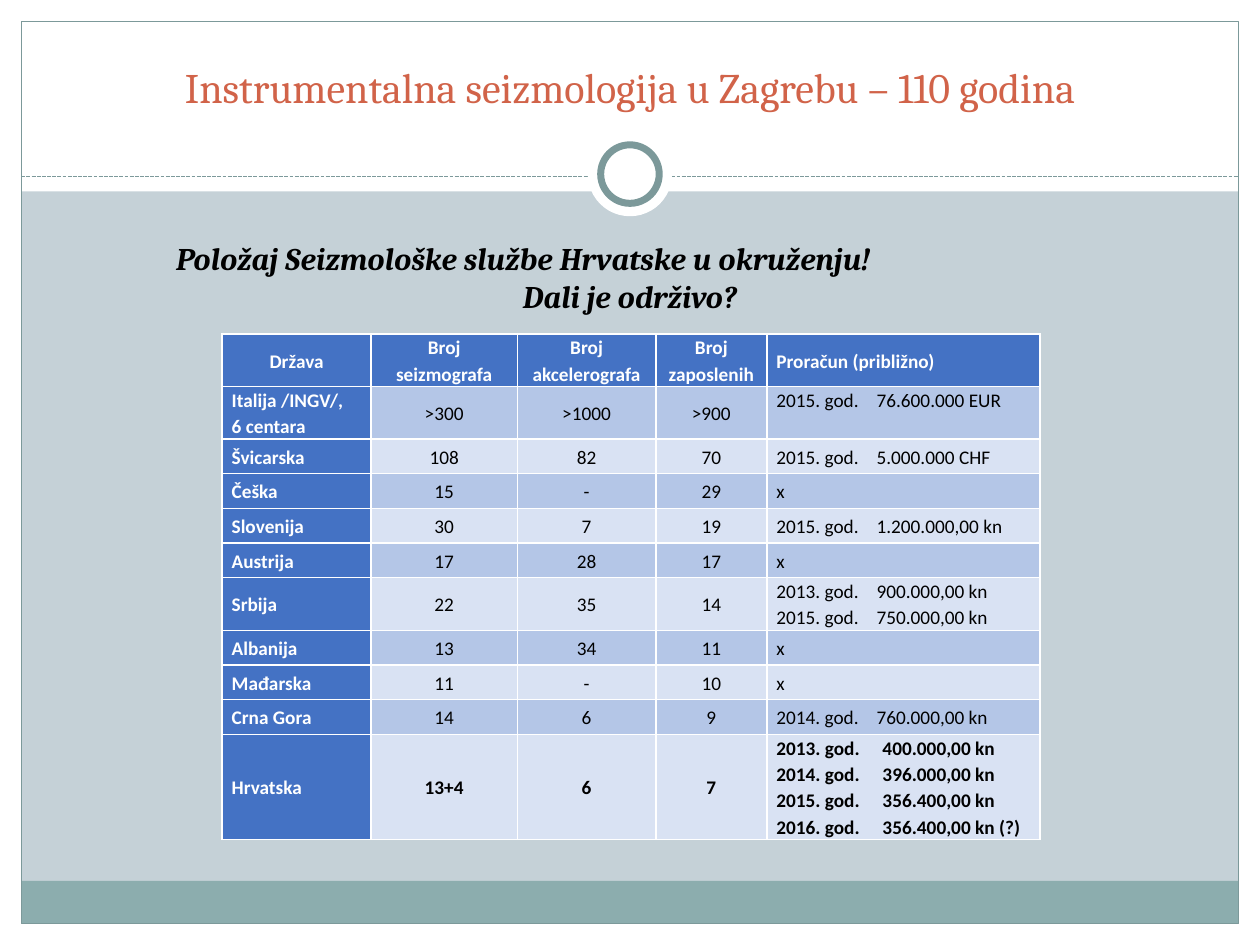
from lxml import etree
from pptx import Presentation
from pptx.dml.color import RGBColor
from pptx.enum import dml, shapes, text
from pptx.oxml import ns
from pptx.util import Cm, Pt

HUES = {"white": "FFFFFF", "black": "000000", "page": "C5D1D7", "band": "8CADAE",
        "rule": "7C999A", "title": "D16349", "head": "4472C4",
        "odd": "B4C6E7", "even": "D9E2F3"}
MID, LEFT = text.PP_ALIGN.CENTER, text.PP_ALIGN.LEFT
COLS = [3.0, 2.95, 2.79, 2.24, 5.51]
LINE, LOW = 0.53, 0.70  # height of a text line and of the lowest row
ROWS = [
    ["Država", "Broj seizmografa", "Broj akcelerografa", "Broj zaposlenih",
     "Proračun (približno)"],
    ["Italija /INGV/,\n6 centara", ">300", ">1000", ">900", "2015. god.\t76.600.000 EUR"],
    ["Švicarska", "108", "82", "70", "2015. god.\t5.000.000 CHF"],
    ["Češka", "15", "-", "29", "x"],
    ["Slovenija", "30", "7", "19", "2015. god.\t1.200.000,00 kn"],
    ["Austrija", "17", "28", "17", "x"],
    ["Srbija", "22", "35", "14",
     "2013. god.\t900.000,00 kn\n2015. god.\t750.000,00 kn"],
    ["Albanija", "13", "34", "11", "x"],
    ["Mađarska", "11", "-", "10", "x"],
    ["Crna Gora", "14", "6", "9", "2014. god.\t760.000,00 kn"],
    ["Hrvatska", "13+4", "6", "7",
     "2013. god.\t400.000,00 kn\n2014. god.\t396.000,00 kn\n"
     "2015. god.\t356.400,00 kn\n2016. god.\t356.400,00 kn (?)"],
]


def hue(name):
    return RGBColor.from_string(HUES[name])


def style(part, form):
    for key, val in form.items():
        setattr(part, key, val)


def write(par, font, color):
    style(par.font, font)
    par.font.color.rgb = hue(color)


def shape(slide, box, fill=None, line=None, width=0.75, kind=shapes.MSO_SHAPE.RECTANGLE):
    item = slide.shapes.add_shape(kind, *map(Cm, box))
    item.shadow.inherit = False
    if fill:
        item.fill.solid()
        item.fill.fore_color.rgb = hue(fill)
    else:
        item.fill.background()
    if line:
        item.line.color.rgb = hue(line)
        item.line.width = Pt(width)
    else:
        item.line.fill.background()


def disc(slide, x, y, size, **look):
    """Place a circle by its centre."""
    shape(slide, (x - size / 2, y - size / 2, size, size), "white",
          kind=shapes.MSO_SHAPE.OVAL, **look)


def frame(slide, box):
    """Draw the white margins, bottom band, outline and ringed divider."""
    left, top, wide, high = box
    edge, head, foot = 0.43, 3.86, 0.86
    right, base = left + wide - edge, top + high - edge
    for part in ((left, base, wide, edge), (left, top, wide, head),
                 (left, top, edge, high), (right, top, edge, high)):
        shape(slide, part, "white")
    inner = wide - 2 * edge
    shape(slide, (left + edge, base - foot, inner, foot), "band")
    shape(slide, (left + edge, top + edge, inner, high - 2 * edge), line="rule")

    y = top + 3.56
    rule = slide.shapes.add_connector(shapes.MSO_CONNECTOR.STRAIGHT,
                                      Cm(left + edge), Cm(y), Cm(right), Cm(y))
    rule.line.color.rgb = hue("rule")
    rule.line.width = Pt(0.75)
    rule.line.dash_style = dml.MSO_LINE.SQUARE_DOT
    etree.SubElement(rule._element.spPr, ns.qn("a:effectLst"))
    x = left + wide / 2
    disc(slide, x, top + 3.51, 1.7)
    disc(slide, x, top + 3.51, 1.18, line="rule", width=4)


def border(cell):
    props = cell._tc.get_or_add_tcPr()
    for side in ("lnL", "lnR", "lnT", "lnB"):
        line = etree.SubElement(props, ns.qn("a:" + side), w=str(Pt(1)))
        fill = etree.SubElement(line, ns.qn("a:solidFill"))
        etree.SubElement(fill, ns.qn("a:srgbClr"), val=HUES["white"])


def add_tab(par, pos):
    tabs = etree.SubElement(par._p.get_or_add_pPr(), ns.qn("a:tabLst"))
    etree.SubElement(tabs, ns.qn("a:tab"), pos=str(Cm(pos)), algn="l")


def fill_cell(cell, words, row, col):
    head = row == 0 or col == 0
    bold = head or row == len(ROWS) - 1
    lone = row == 1 and col == 4  # a single line kept level with the first of two
    style(cell, {"margin_left": Cm(0.19), "margin_right": Cm(0.19),
                 "margin_top": 0, "margin_bottom": 0,
                 "vertical_anchor": text.MSO_ANCHOR.TOP if lone else text.MSO_ANCHOR.MIDDLE})
    border(cell)
    cell.fill.solid()
    cell.fill.fore_color.rgb = hue("head" if head else "odd" if row % 2 else "even")
    cell.text = words
    mid = col in (1, 2, 3) or (row == 0 and col == 0)
    for par in cell.text_frame.paragraphs:
        style(par, {"alignment": MID if mid else LEFT, "line_spacing": Pt(15)})
        if "\t" in words:
            add_tab(par, 2.14 if bold else 2.02)
        write(par, {"name": "Calibri", "size": Pt(11), "bold": bold},
              "white" if head else "black")


def grid(slide, left, top):
    """Place the table of countries with its corner at the given point."""
    highs = [max(LOW, LINE * max(w.count("\n") + 1 for w in row)) for row in ROWS]
    highs[0] = 2 * LINE
    table = slide.shapes.add_table(len(ROWS), len(COLS), Cm(left), Cm(top),
                                   Cm(sum(COLS)), Cm(sum(highs))).table
    for col, wide in zip(table.columns, COLS):
        col.width = Cm(wide)
    for r, row in enumerate(ROWS):
        table.rows[r].height = Cm(highs[r])
        for c, words in enumerate(row):
            fill_cell(table.cell(r, c), words, r, c)


def heading(slide, box):
    title = slide.shapes.title
    style(title, dict(zip(("left", "top", "width", "height"), map(Cm, box))))
    slide.shapes._spTree.append(title._element)  # bring in front of the white band
    body = title.text_frame
    body.text = "Instrumentalna seizmologija u Zagrebu – 110 godina"
    style(body, {"vertical_anchor": text.MSO_ANCHOR.BOTTOM, "word_wrap": True,
                 "auto_size": text.MSO_AUTO_SIZE.NONE})
    par = body.paragraphs[0]
    par.alignment = MID
    write(par, {"name": "Cambria", "size": Pt(24)}, "title")


def lead(slide, box):
    """Place the two-line question above the table."""
    body = slide.shapes.add_textbox(*map(Cm, box)).text_frame
    body.word_wrap = True
    body.text = "Položaj Seizmološke službe Hrvatske u okruženju!\nDali je održivo?"
    for par, side in zip(body.paragraphs, (LEFT, MID)):
        par.alignment = side
        write(par, {"name": "Cambria", "size": Pt(18), "bold": True, "italic": True}, "black")


def main():
    deck = Presentation()
    deck.slide_width, deck.slide_height = Cm(25.4), Cm(19.05)
    slide = deck.slides.add_slide(deck.slide_layouts[5])
    back = slide.background.fill
    back.solid()
    back.fore_color.rgb = hue("page")
    frame(slide, (0, 0, 25.4, 19.05))
    grid(slide, 4.48, 6.73)
    heading(slide, (0.85, 1.12, 23.7, 1.27))
    lead(slide, (3.3, 4.7, 18.8, 1.8))
    deck.save("out.pptx")


if __name__ == "__main__":
    main()
